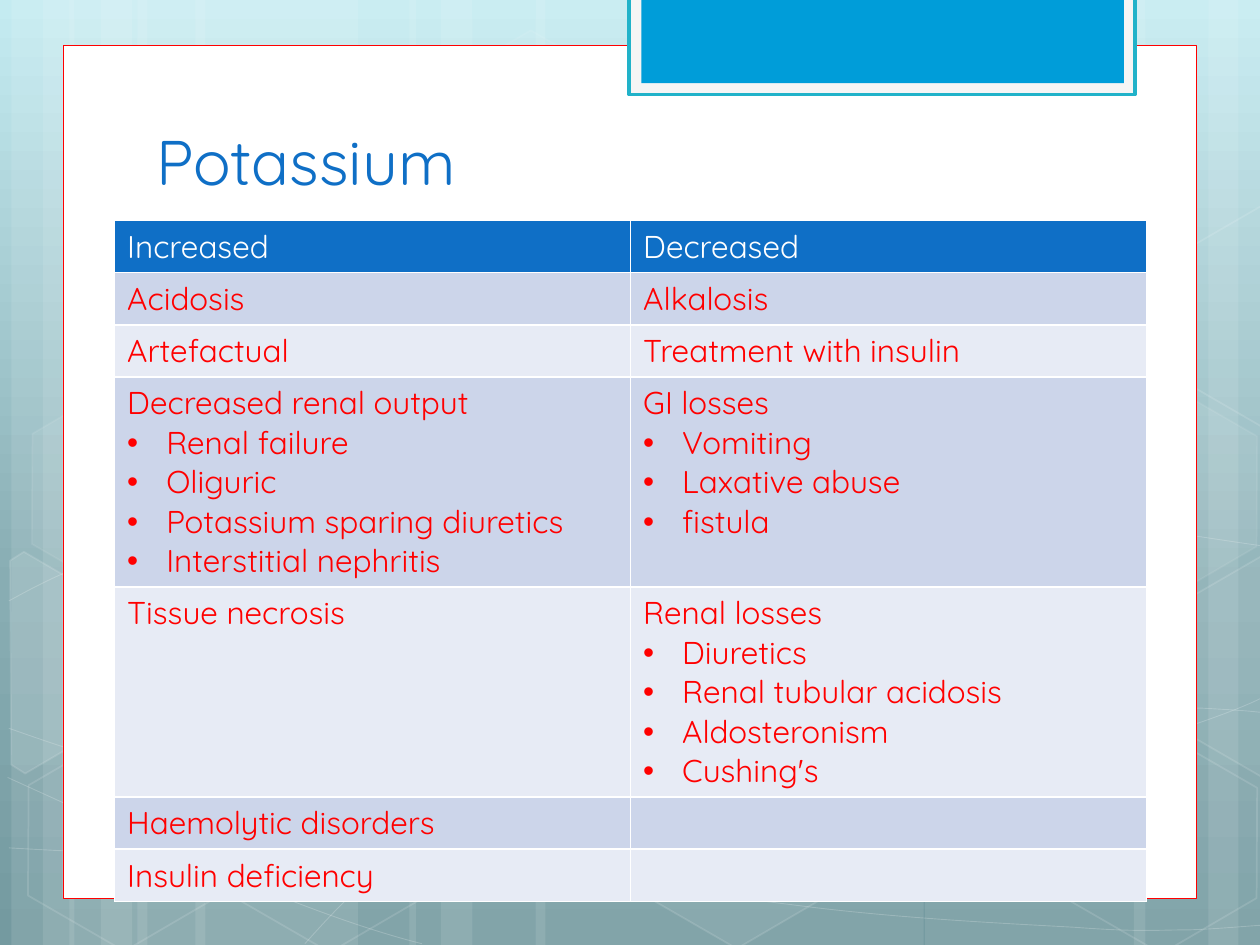
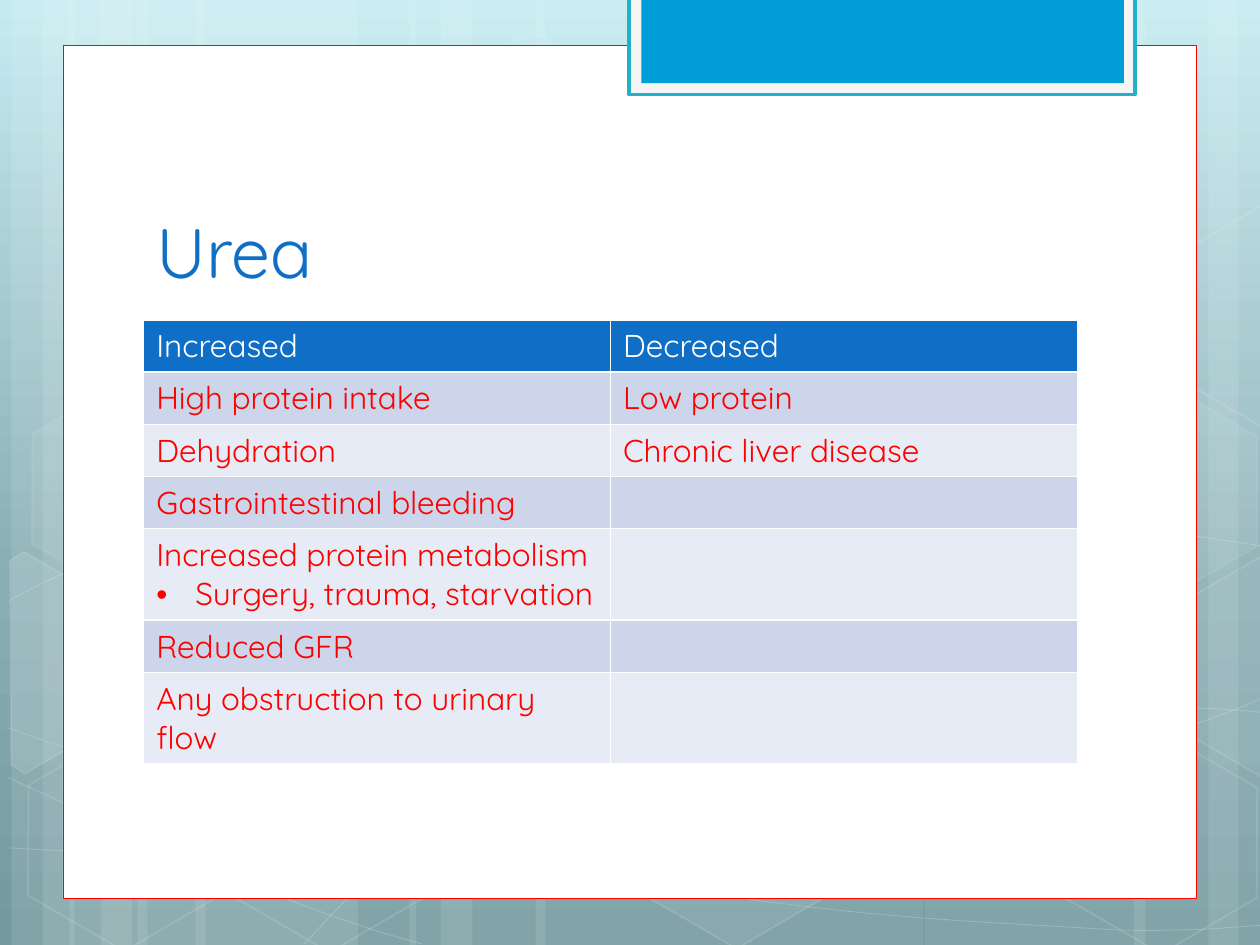
from lxml.etree import SubElement
from pptx import Presentation
from pptx.dml.color import RGBColor
from pptx.enum.shapes import MSO_SHAPE as Preset
from pptx.enum.text import MSO_ANCHOR, MSO_AUTO_SIZE, PP_ALIGN
from pptx.oxml import parse_xml
from pptx.oxml.ns import nsdecls, qn
from pptx.util import Inches, Pt

FONT = "Quicksand"
WHITE, RED, BLUE = "FFFFFF", "FF0000", "0F6FC6"
TAB_EDGE, TAB_RIM, TAB = "21B2C9", "F5F5F5", "009DD9"
BANDS = ("CCD5EA", "E7EBF5")
SKY = ((0, "C4EBF1"), (62, "88ADB3"), (100, "749AA0"))

# Left edge and width of each full-height translucent strip
STRIPS = [(origin + offset, width) for origin in (0.09, 0.55)
          for offset, width in ((1, 1.75), (0, 0.5), (0.25, 0.83))]
STRIPS += [(7.34, 1.75), (9.59, 0.5), (9, 0.83),
           (4.25, 3.08), (3.25, 0.5), (3.5, 0.83)]

# Each wave is a list of segments: one point is a move or a straight line,
# three points are the controls and the end of a Bezier curve
WAVES = [
    [[(0.07, 6.73)], [(0.61, 6.76), (1.15, 6.79), (1.9, 6.78)],
     [(2.65, 6.77), (3.58, 6.75), (4.58, 6.65)],
     [(5.58, 6.55), (7, 6.36), (7.92, 6.17)],
     [(8.83, 5.98), (9.77, 5.68), (10.07, 5.51)]],
    [[(0.07, 4.77)], [(0.36, 4.61), (0.65, 4.46), (1.21, 4.31)],
     [(1.78, 4.16), (2.59, 3.94), (3.47, 3.87)],
     [(4.36, 3.8), (5.44, 3.79), (6.54, 3.87)],
     [(7.64, 3.95), (9.47, 4.26), (10.07, 4.34)]],
    [[(0.06, 6.17)], [(1.27, 6.72), (2.47, 7.27), (3.35, 7.49)]],
    [[(0.07, 5.78)], [(0.38, 5.89), (0.7, 6), (1.28, 6.16)],
     [(1.86, 6.31), (2.73, 6.56), (3.57, 6.73)],
     [(4.4, 6.9), (5.45, 7.08), (6.28, 7.18)],
     [(7.11, 7.29), (8, 7.33), (8.53, 7.36)],
     [(9.06, 7.4), (9.19, 7.38), (9.45, 7.38)],
     [(9.71, 7.37), (9.89, 7.35), (10.07, 7.34)]],
    [[(2.42, 7.49)], [(2.6, 7.29), (2.78, 7.09), (3.02, 6.91)],
     [(3.26, 6.72), (3.6, 6.53), (3.88, 6.39)],
     [(4.16, 6.25), (4.33, 6.19), (4.69, 6.09)],
     [(5.06, 5.99), (5.73, 5.85), (6.08, 5.78)],
     [(6.44, 5.71), (6.49, 5.71), (6.8, 5.69)],
     [(7.11, 5.66), (7.6, 5.63), (7.94, 5.62)],
     [(8.29, 5.61), (8.86, 5.62), (8.86, 5.62)],
     [(9.53, 5.62)],
     [(9.71, 5.63), (9.88, 5.64), (9.97, 5.65)],
     [(10.06, 5.66), (10.03, 5.65), (10.06, 5.66)]],
]

# Left, top, fill opacity, line opacity (percent)
HEXAGONS = [
    (3.34, 0.36, 4, 8), (4.97, 5.89, 6, 12), (0.11, 5.91, None, 12),
    (0.14, 3.12, 7, 8), (1.74, 5.92, None, 12), (7.53, 4.53, 10, 12),
    (8.34, 5.93, None, 12), (8.34, 3.14, 7, 8),
]

# Outline and fill opacity of the hexagons cut off by the slide edge
CUT_HEXAGONS = [
    ([(0.08, 4.45), (0.19, 4.38), (0.96, 4.83), (0.95, 5.7),
      (0.2, 6.14), (0.09, 6.07)], 10),
    ([(9.26, 4.85), (10.02, 4.41), (10.09, 4.46), (10.09, 6.13),
      (10.02, 6.17), (9.26, 5.73)], 4),
    ([(9.26, 2.07), (10.02, 1.63), (10.1, 1.68), (10.09, 3.35),
      (10.02, 3.39), (9.26, 2.95)], None),
]

# Each cell is a tuple: a heading, then its bullets
POTASSIUM = [
    (("Increased",), ("Decreased",)),
    (("Acidosis",), ("Alkalosis",)),
    (("Artefactual",), ("Treatment with insulin",)),
    (("Decreased renal output", "Renal failure", "Oliguric",
      "Potassium sparing diuretics", "Interstitial nephritis"),
     ("GI losses", "Vomiting", "Laxative abuse", "fistula")),
    (("Tissue necrosis",),
     ("Renal losses", "Diuretics", "Renal tubular acidosis",
      "Aldosteronism", "Cushing's")),
    (("Haemolytic disorders",), ()),
    (("Insulin deficiency",), ()),
]
UREA = [
    (("Increased",), ("Decreased",)),
    (("High protein intake",), ("Low protein",)),
    (("Dehydration",), ("Chronic liver disease",)),
    (("Gastrointestinal bleeding",), ()),
    (("Increased protein metabolism", "Surgery, trauma, starvation"), ()),
    (("Reduced GFR",), ()),
    (("Any obstruction to urinary flow",), ()),
]


def rgb(color):
    return RGBColor.from_string(color)


def set_opacity(shape, color_query, percent):
    for color in shape.element.spPr.xpath(color_query):
        SubElement(color, qn("a:alpha")).set("val", str(percent * 1000))


def paint(shape, fill=None, line=None, width=1, fill_opacity=100, line_opacity=100):
    shape.shadow.inherit = False
    if fill:
        shape.fill.solid()
        shape.fill.fore_color.rgb = rgb(fill)
        set_opacity(shape, "a:solidFill/a:srgbClr", fill_opacity)
    else:
        shape.fill.background()
    if line:
        shape.line.color.rgb = rgb(line)
        shape.line.width = Pt(width)
        set_opacity(shape, "a:ln/a:solidFill/a:srgbClr", line_opacity)
    else:
        shape.line.fill.background()


def add_preset(shapes, preset, box, **look):
    shape = shapes.add_shape(preset, *map(Inches, box))
    paint(shape, **look)
    return shape


def add_outline(shapes, points, close, **look):
    corners = [(Inches(x), Inches(y)) for x, y in points]
    builder = shapes.build_freeform(*corners[0])
    builder.add_line_segments(corners[1:], close=close)
    shape = builder.convert_to_shape()
    paint(shape, **look)
    return shape


def add_wave(shapes, segments):
    """Join the segment ends, then bend the lines that have controls."""
    wave = add_outline(shapes, [segment[-1] for segment in segments], False,
                       line=WHITE, width=0.5, line_opacity=20)
    lines = wave.element.spPr.xpath(".//a:lnTo")
    for line, segment in zip(lines, segments[1:]):
        if len(segment) == 3:
            points = "".join(
                f'<a:pt x="{Inches(x) - wave.left}" y="{Inches(y) - wave.top}"/>'
                for x, y in segment)
            line.getparent().replace(line, parse_xml(
                f'<a:cubicBezTo {nsdecls("a")}>{points}</a:cubicBezTo>'))


def draw_scenery(shapes):
    for left, width in STRIPS:
        add_preset(shapes, Preset.RECTANGLE, (left, 0, width, 7.5),
                   fill=WHITE, fill_opacity=10)
    for segments in WAVES:
        add_wave(shapes, segments)
    for left, top, fill_opacity, line_opacity in HEXAGONS:
        hexagon = add_preset(shapes, Preset.HEXAGON, (left, top, 1.75, 1.52),
                             fill=fill_opacity and WHITE, fill_opacity=fill_opacity,
                             line=WHITE, line_opacity=line_opacity)
        hexagon.adjustments[0] = 0.285
        hexagon.adjustments[1] = 1.155
        hexagon.rotation = 30
    for outline, fill_opacity in CUT_HEXAGONS:
        add_outline(shapes, outline, True, fill=fill_opacity and WHITE,
                    fill_opacity=fill_opacity, line=WHITE, line_opacity=12)


def draw_card(shapes):
    add_preset(shapes, Preset.RECTANGLE, (0.5, 0.36, 9, 6.77),
               fill=WHITE, line=RED, width=0.5)
    add_preset(shapes, Preset.RECTANGLE, (4.99, -0.02, 4.02, 0.77),
               fill=TAB_RIM, line=TAB_EDGE, width=2)
    add_preset(shapes, Preset.RECTANGLE, (5.09, -0.02, 3.83, 0.68), fill=TAB)


def set_sky(layout):
    layout.background.fill.gradient()
    gradient = layout.element.xpath("p:cSld/p:bg/p:bgPr/a:gradFill")[0]
    stops = "".join(f'<a:gs pos="{pos * 1000}"><a:srgbClr val="{color}"/></a:gs>'
                    for pos, color in SKY)
    gradient.getparent().replace(gradient, parse_xml(
        f'<a:gradFill {nsdecls("a")} rotWithShape="1"><a:gsLst>{stops}</a:gsLst>'
        '<a:lin ang="5400000" scaled="0"/></a:gradFill>'))


def dress_layout(layout, first_slide):
    """Draw the shared backdrop on a slide, then hand it over to the layout."""
    set_sky(layout)
    title = first_slide.shapes.title
    draw_scenery(first_slide.shapes)
    draw_card(first_slide.shapes)
    for shape in list(first_slide.shapes):
        if shape.shape_id != title.shape_id:
            layout.shapes.element.append(shape.element)


def add_run(paragraph, text, size, color):
    run = paragraph.add_run()
    run.text = text
    run.font.name = FONT
    run.font.size = Pt(size)
    run.font.bold = False
    run.font.color.rgb = rgb(color)


def set_title(slide, text, box, size):
    title = slide.shapes.title
    title.left, title.top, title.width, title.height = map(Inches, box)
    frame = title.text_frame
    frame.word_wrap = True
    frame.auto_size = MSO_AUTO_SIZE.NONE
    frame.vertical_anchor = MSO_ANCHOR.BOTTOM
    frame.paragraphs[0].alignment = PP_ALIGN.LEFT
    add_run(frame.paragraphs[0], text, size, BLUE)


def add_bullet(paragraph):
    properties = paragraph._p.get_or_add_pPr()
    properties.set("marL", str(Inches(0.31)))
    properties.set("indent", str(-Inches(0.31)))
    SubElement(properties, qn("a:buFont")).set("typeface", "Arial")
    SubElement(properties, qn("a:buChar")).set("char", "•")


def fill_cell(cell, lines, fill, color):
    cell.fill.solid()
    cell.fill.fore_color.rgb = rgb(fill)
    frame = cell.text_frame
    for i, line in enumerate(lines):
        paragraph = frame.add_paragraph() if i else frame.paragraphs[0]
        if i:
            add_bullet(paragraph)
        add_run(paragraph, line, 18, color)


def add_causes_table(slide, box, causes, row_heights):
    table = slide.shapes.add_table(len(causes), 2, *map(Inches, box)).table
    for r, (row, height) in enumerate(zip(causes, row_heights)):
        table.rows[r].height = Inches(height)
        fill, color = (BANDS[(r - 1) % 2], RED) if r else (BLUE, WHITE)
        for c, lines in enumerate(row):
            fill_cell(table.cell(r, c), lines, fill, color)


def main():
    prs = Presentation()
    prs.slide_width, prs.slide_height = Inches(10), Inches(7.5)
    layout = prs.slide_layouts.get_by_name("Title Only")

    potassium = prs.slides.add_slide(layout)
    dress_layout(layout, potassium)
    set_title(potassium, "Potassium", (1.14, 1.12, 7.68, 0.5), 36)
    add_causes_table(potassium, (0.91, 1.75, 8.19, 5.23), POTASSIUM,
                     [0.41] * 3 + [1.6] * 2 + [0.41] * 2)

    urea = prs.slides.add_slide(layout)
    set_title(urea, "Urea", (1.14, 1.12, 7.68, 1.25), 40)
    add_causes_table(urea, (1.14, 2.54, 7.41, 4.03), UREA, [0.41] * 7)

    prs.save("out.pptx")


if __name__ == "__main__":
    main()
